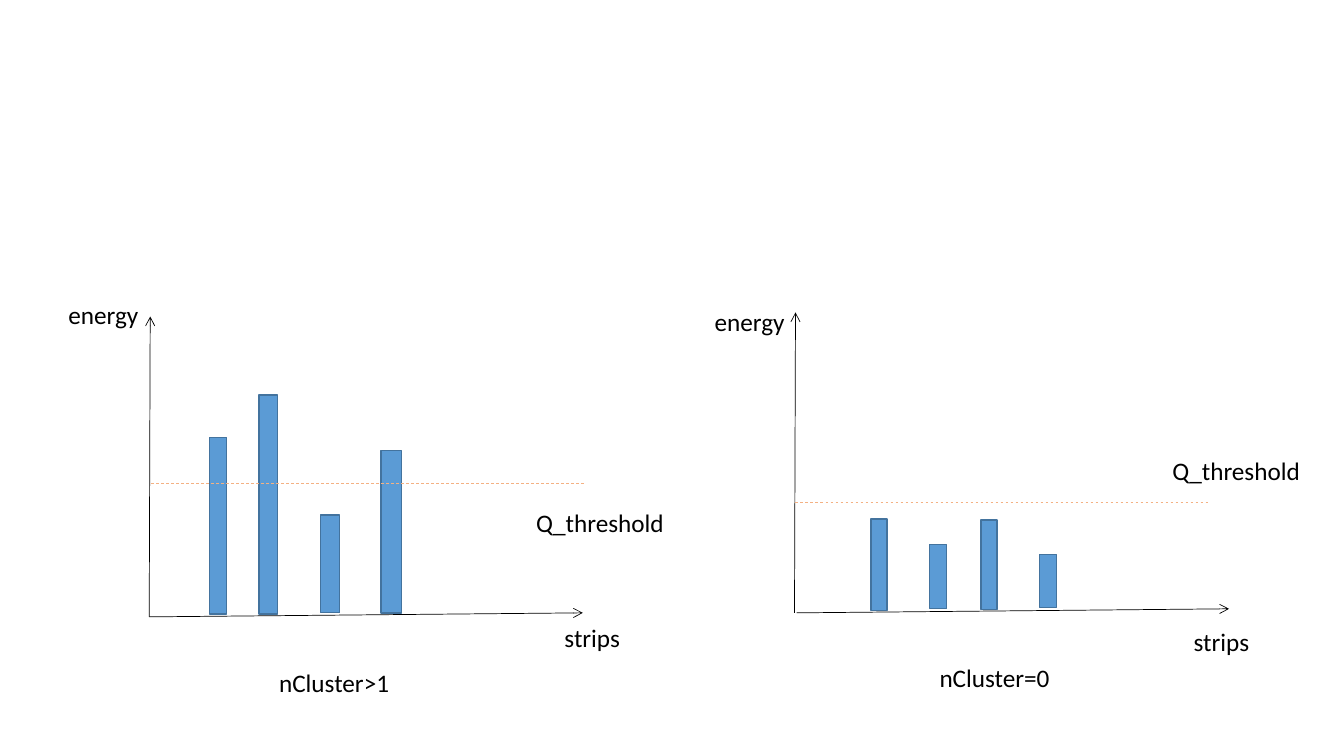
"""Build a slide with two strip-energy plots around a charge threshold."""
from dataclasses import dataclass

from lxml import etree
from pptx import Presentation
from pptx.dml.color import RGBColor
from pptx.enum import dml, shapes, text
from pptx.oxml import ns
from pptx.slide import Slide
from pptx import util as u

COLORS = {"ink": "000000", "bar": "5B9BD5", "edge": "43739E", "threshold": "F4B183"}
FRAME_FORMAT = {"word_wrap": True, "auto_size": text.MSO_AUTO_SIZE.SHAPE_TO_FIT_TEXT}
FONT_FORMAT = {"name": "Calibri", "size": u.Pt(18)}


@dataclass(frozen=True)
class Label:
    words: str
    left: float
    top: float
    width: float


@dataclass(frozen=True)
class Bar:
    left: float
    top: float
    width: float
    height: float


@dataclass(frozen=True)
class Line:
    x1: float
    y1: float
    x2: float
    y2: float


@dataclass(frozen=True)
class Plot:
    axes: tuple[Line, Line]
    bars: tuple[Bar, ...]
    threshold: Line
    labels: tuple[Label, ...]


PLOTS = (
    Plot(
        axes=(Line(1.48, 6.12, 5.78, 6.08), Line(1.48, 6.12, 1.49, 3.14)),
        bars=(
            Bar(2.08, 4.34, 0.17, 1.75),
            Bar(2.57, 3.92, 0.18, 2.17),
            Bar(3.18, 5.11, 0.19, 0.97),
            Bar(3.78, 4.47, 0.2, 1.61),
        ),
        threshold=Line(1.5, 4.8, 5.8, 4.8),
        labels=(
            Label("energy", 0.58, 2.92, 0.9),
            Label("strips", 5.5, 6.12, 0.96),
            Label("Q_threshold", 5.22, 4.98, 1.57),
            Label("nCluster>1", 2.67, 6.57, 1.53),
        ),
    ),
    Plot(
        axes=(Line(7.9, 6.08, 12.19, 6.04), Line(7.88, 6.08, 7.89, 3.1)),
        bars=(
            Bar(8.64, 5.15, 0.16, 0.91),
            Bar(9.22, 5.4, 0.17, 0.64),
            Bar(9.73, 5.16, 0.16, 0.89),
            Bar(10.31, 5.5, 0.17, 0.53),
        ),
        threshold=Line(7.89, 4.98, 12, 4.98),
        labels=(
            Label("energy", 6.99, 2.99, 0.9),
            Label("strips", 11.74, 6.16, 0.96),
            Label("Q_threshold", 11.53, 4.47, 1.5),
            Label("nCluster=0", 9.22, 6.52, 1.53),
        ),
    ),
)


def apply_format(target: object, values: dict[str, object]) -> None:
    for name, value in values.items():
        setattr(target, name, value)


def rgb(name: str) -> RGBColor:
    return RGBColor.from_string(COLORS[name])


def draw_line(page: Slide, line: Line, color: str, arrow: bool) -> None:
    ends = (u.Inches(value) for value in (line.x1, line.y1, line.x2, line.y2))
    connector = page.shapes.add_connector(shapes.MSO_CONNECTOR.STRAIGHT, *ends)
    connector.line.width = u.Pt(0.5)
    connector.line.color.rgb = rgb(color)
    if arrow:
        outline = connector.line._get_or_add_ln()
        etree.SubElement(outline, ns.qn("a:tailEnd"), type="arrow")
    else:
        connector.line.dash_style = dml.MSO_LINE.DASH
    etree.SubElement(connector._element.spPr, ns.qn("a:effectLst"))


def draw_bar(page: Slide, bar: Bar) -> None:
    bounds = (u.Inches(value) for value in (bar.left, bar.top, bar.width, bar.height))
    box = page.shapes.add_shape(shapes.MSO_SHAPE.RECTANGLE, *bounds)
    box.shadow.inherit = False
    box.fill.solid()
    box.fill.fore_color.rgb = rgb("bar")
    box.line.color.rgb = rgb("edge")
    box.line.width = u.Pt(1)


def draw_label(page: Slide, label: Label) -> None:
    bounds = (u.Inches(value) for value in (label.left, label.top, label.width, 0.4))
    box = page.shapes.add_textbox(*bounds)
    apply_format(box.text_frame, FRAME_FORMAT)
    para = box.text_frame.paragraphs[0]
    span = para.add_run()
    span.text = label.words
    apply_format(span.font, FONT_FORMAT)
    span.font.color.rgb = rgb("ink")


def draw_plot(page: Slide, plot: Plot) -> None:
    for axis in plot.axes:
        draw_line(page, axis, "ink", arrow=True)
    for bar in plot.bars:
        draw_bar(page, bar)
    draw_line(page, plot.threshold, "threshold", arrow=False)
    for label in plot.labels:
        draw_label(page, label)


def main() -> None:
    deck = Presentation()
    apply_format(deck, {"slide_width": u.Inches(13.33), "slide_height": u.Inches(7.5)})
    page = deck.slides.add_slide(deck.slide_layouts[6])
    for plot in PLOTS:
        draw_plot(page, plot)
    deck.save("out.pptx")


if __name__ == "__main__":
    main()
